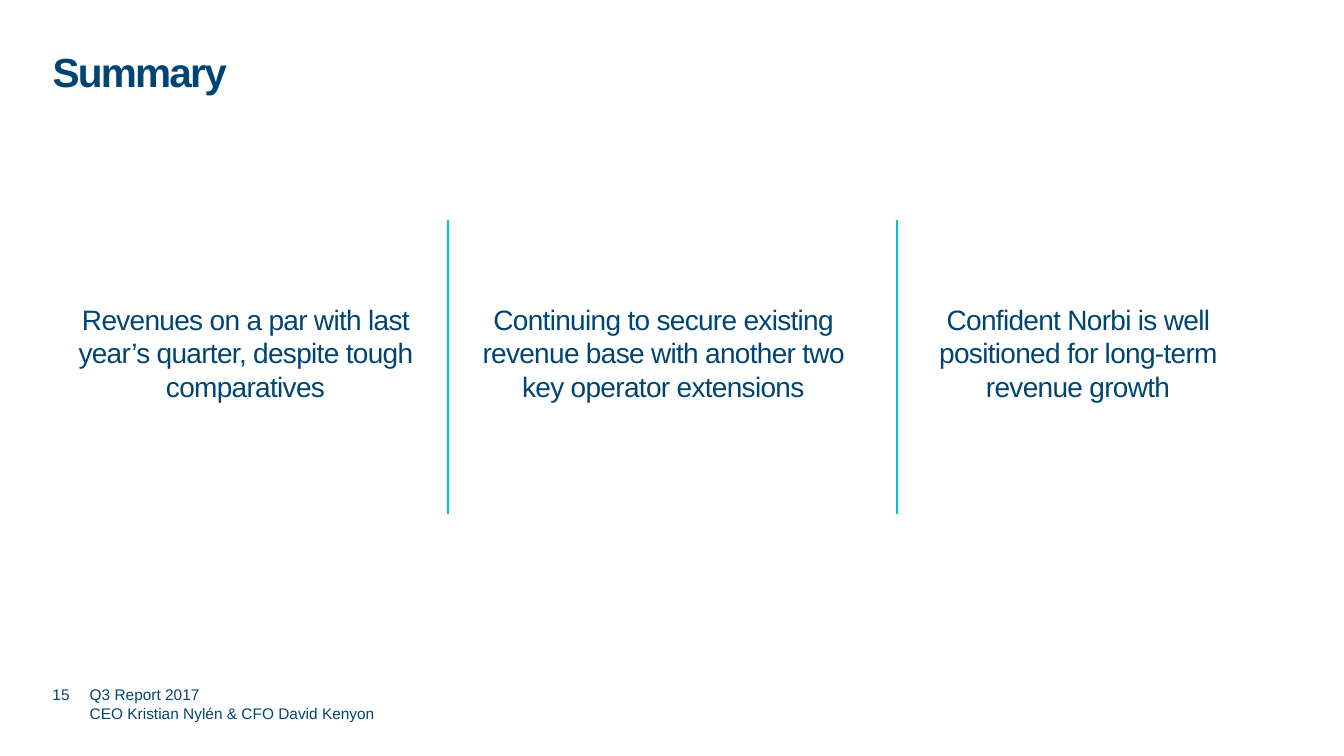
from lxml.etree import SubElement
from pptx import Presentation
from pptx.dml.color import RGBColor
from pptx.enum.shapes import MSO_CONNECTOR as Connector
from pptx.enum.text import MSO_ANCHOR as Anchor, MSO_AUTO_SIZE as AutoSize, PP_ALIGN as Align
from pptx.oxml.ns import qn
from pptx.util import Pt


def colour(value):
    return RGBColor.from_string(value)


class SlideBuilder:
    navy = "004571"
    cyan = "00C3DE"
    font = "Arial"

    def __init__(self, slide):
        self.slide = slide

    def fill_text(self, shape, lines, size, frame_format, bold=False, spacing=0, **paragraph_format):
        frame = shape.text_frame
        frame.text = "\n".join(lines)
        for name, value in {"word_wrap": True, **frame_format}.items():
            setattr(frame, name, value)
        for paragraph in frame.paragraphs:
            for name, value in paragraph_format.items():
                setattr(paragraph, name, value)
            for run in paragraph.runs:
                for name, value in {"name": self.font, "size": Pt(size), "bold": bold}.items():
                    setattr(run.font, name, value)
                run.font.color.rgb = colour(self.navy)
                if spacing:
                    run._r.get_or_add_rPr().set("spc", str(round(spacing * 100)))

    def plain_frame(self, anchor):
        margins = {f"margin_{side}": 0 for side in ("left", "top", "right", "bottom")}
        return {"auto_size": AutoSize.NONE, "vertical_anchor": anchor, **margins}

    def title(self, text, left, top, width, height):
        shape = self.slide.shapes.title
        position = {"left": left, "top": top, "width": width, "height": height}
        for name, value in position.items():
            setattr(shape, name, Pt(value))
        self.fill_text(shape, [text], 29, self.plain_frame(Anchor.TOP), bold=True,
                       spacing=-1.3, alignment=Align.LEFT, line_spacing=0.9)

    def text_box(self, left, top, width, height):
        return self.slide.shapes.add_textbox(Pt(left), Pt(top), Pt(width), Pt(height))

    def message(self, text, left, width):
        shape = self.text_box(left, 212.4, width, 80)
        self.fill_text(shape, [text], 20, {"auto_size": AutoSize.SHAPE_TO_FIT_TEXT},
                       spacing=-0.5, alignment=Align.CENTER)

    def footer(self, lines, left, top, width):
        shape = self.text_box(left, top, width, 15)
        self.fill_text(shape, lines, 11, self.plain_frame(Anchor.BOTTOM))

    def divider(self, x):
        line = self.slide.shapes.add_connector(Connector.STRAIGHT, Pt(x), Pt(157), Pt(x), Pt(367.2))
        line.line.color.rgb = colour(self.cyan)
        line.line.width = Pt(1.5)
        SubElement(line._element.spPr, qn("a:effectLst"))


def main():
    presentation = Presentation()
    presentation.slide_width = Pt(960)
    presentation.slide_height = Pt(540)
    slide = presentation.slides.add_slide(presentation.slide_layouts[5])
    builder = SlideBuilder(slide)

    builder.title("Summary", 37.5, 37.5, 756, 26.6)
    messages = [
        ("Revenues on a par with last year’s quarter, despite tough comparatives", 40.3, 270),
        ("Continuing to secure existing revenue base with another two key operator extensions", 335.5, 276.5),
        ("Confident Norbi is well positioned for long-term revenue growth", 635, 270),
    ]
    for text, left, width in messages:
        builder.message(text, left, width)
    for x in (319.7, 640.8):
        builder.divider(x)
    builder.footer(["15"], 37.5, 487.5, 26.6)
    builder.footer(["Q3 Report 2017", "CEO Kristian Nylén & CFO David Kenyon"], 64.1, 501.1, 378)

    presentation.save("out.pptx")


if __name__ == "__main__":
    main()
